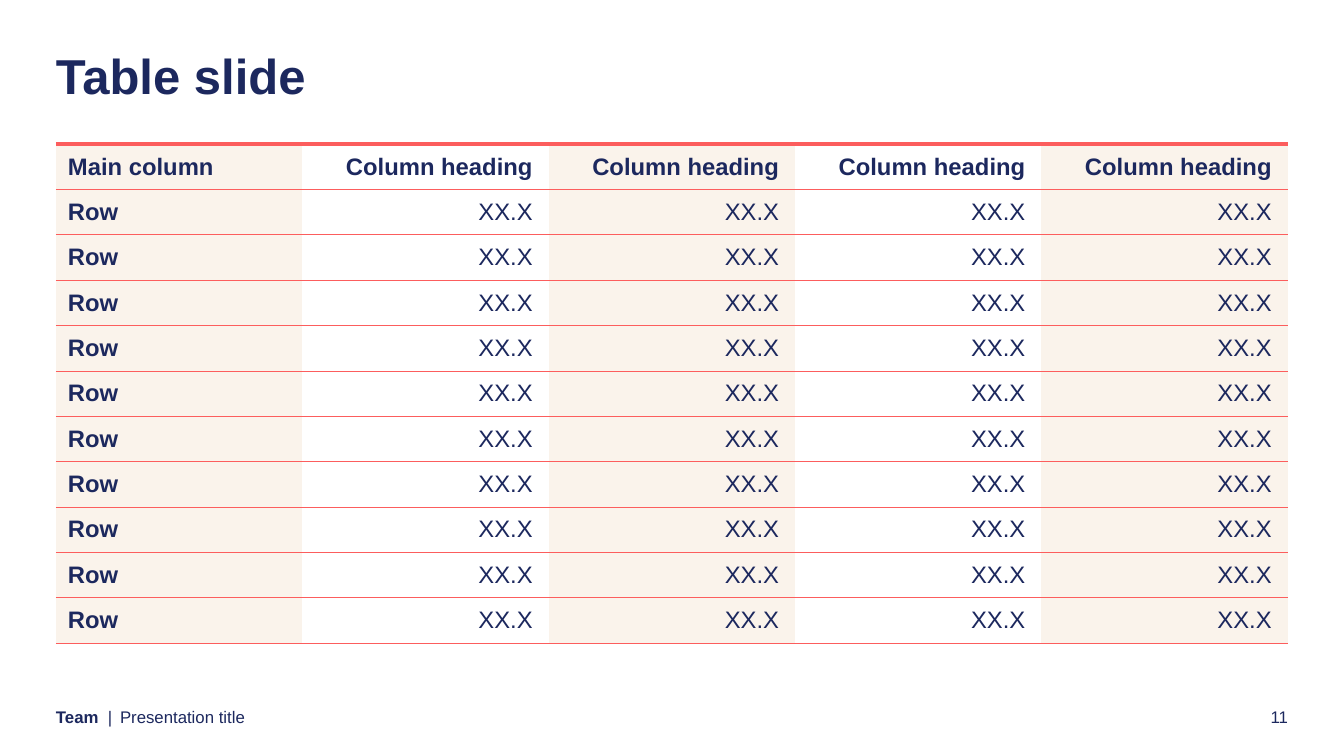
from dataclasses import dataclass

from lxml.etree import SubElement
from pptx import Presentation
from pptx.dml.color import RGBColor
from pptx.enum.text import MSO_ANCHOR, PP_ALIGN
from pptx.oxml.ns import qn
from pptx.util import Pt

TITLE = "Table slide"
HEADINGS = ["Main column"] + ["Column heading"] * 4
ROWS = [["Row"] + ["XX.X"] * 4 for _ in range(10)]
FOOTER_OWNER = [("Team ", True), (" |", False)]
FOOTER_TITLE = "Presentation title"
PAGE_NUMBER = "11"


@dataclass(frozen=True)
class Theme:
    font: str = "Arial"
    ink: str = "1C285E"
    rule: str = "FC5D5D"
    stripes: tuple = ("FAF3EB", "FFFFFF")
    title_size: int = 35
    table_size: int = 17
    footer_size: int = 12
    top_rule: float = 3
    row_rule: float = 0.5


THEME = Theme()
NO_STYLE_NO_GRID = "{2D5ABB26-0587-4C30-8999-92F81FD0307C}"

EMU_PER_PX = 914400 / 100.8
LEFT, WIDTH = 56, 1232
TABLE_TOP, TABLE_HEIGHT = 144, 499
FOOTER_TOP, FOOTER_HEIGHT = 707, 20
CELL_MARGINS = (12, 8, 16, 8)


def px(length):
    return round(length * EMU_PER_PX)


def style_run(run, size, bold=False):
    font = run.font
    font.name, font.size, font.bold = THEME.font, Pt(size), bold
    font.color.rgb = RGBColor.from_string(THEME.ink)


def add_label(slide, box, runs, size, align=PP_ALIGN.LEFT, wrap=True):
    """Add a text box without margins; runs are (text, bold) pairs."""
    frame = slide.shapes.add_textbox(*map(px, box)).text_frame
    frame.word_wrap = wrap
    frame.margin_left = frame.margin_top = frame.margin_right = frame.margin_bottom = 0
    line = frame.paragraphs[0]
    line.alignment = align
    for text, bold in runs:
        run = line.add_run()
        run.text = text
        style_run(run, size, bold)
    return line


def add_rule(cell, side, width):
    """Draw a border on one side of a cell: lnT or lnB."""
    border = SubElement(cell._tc.get_or_add_tcPr(), qn(f"a:{side}"), w=str(Pt(width)))
    fill = SubElement(border, qn("a:solidFill"))
    SubElement(fill, qn("a:srgbClr"), val=THEME.rule)


def fill_cell(cell, text, row, column):
    cell.text = text
    cell.vertical_anchor = MSO_ANCHOR.MIDDLE
    (cell.margin_left, cell.margin_top,
     cell.margin_right, cell.margin_bottom) = map(px, CELL_MARGINS)
    line = cell.text_frame.paragraphs[0]
    line.alignment = PP_ALIGN.RIGHT if column else PP_ALIGN.LEFT
    style_run(line.runs[0], THEME.table_size, bold=row == 0 or column == 0)
    add_rule(cell, "lnT", THEME.row_rule if row else THEME.top_rule)
    add_rule(cell, "lnB", THEME.row_rule)
    cell.fill.solid()
    cell.fill.fore_color.rgb = RGBColor.from_string(THEME.stripes[column % 2])


def add_data_table(slide):
    content = [HEADINGS] + ROWS
    table = slide.shapes.add_table(
        len(content), len(HEADINGS),
        px(LEFT), px(TABLE_TOP), px(WIDTH), px(TABLE_HEIGHT)).table
    table.horz_banding = False
    table._tbl.tblPr.find(qn("a:tableStyleId")).text = NO_STYLE_NO_GRID
    for column in table.columns:
        column.width = px(WIDTH / len(HEADINGS))
    for row, texts in enumerate(content):
        table.rows[row].height = px(TABLE_HEIGHT / len(content))
        for column, text in enumerate(texts):
            fill_cell(table.cell(row, column), text, row, column)


def main():
    deck = Presentation()
    deck.slide_width, deck.slide_height = px(1344), px(756)
    slide = deck.slides.add_slide(deck.slide_layouts[6])

    title = add_label(slide, (LEFT, 52, 1192, 68), [(TITLE, True)], THEME.title_size)
    title.line_spacing = 0.9
    add_data_table(slide)

    add_label(slide, (LEFT, FOOTER_TOP, 57, FOOTER_HEIGHT), FOOTER_OWNER,
              THEME.footer_size, wrap=False)
    add_label(slide, (120, FOOTER_TOP, 458, FOOTER_HEIGHT), [(FOOTER_TITLE, False)],
              THEME.footer_size)
    number_width = 99
    add_label(slide, (LEFT + WIDTH - number_width, FOOTER_TOP, number_width, FOOTER_HEIGHT),
              [(PAGE_NUMBER, False)], THEME.footer_size, PP_ALIGN.RIGHT)
    deck.save("out.pptx")


if __name__ == "__main__":
    main()
